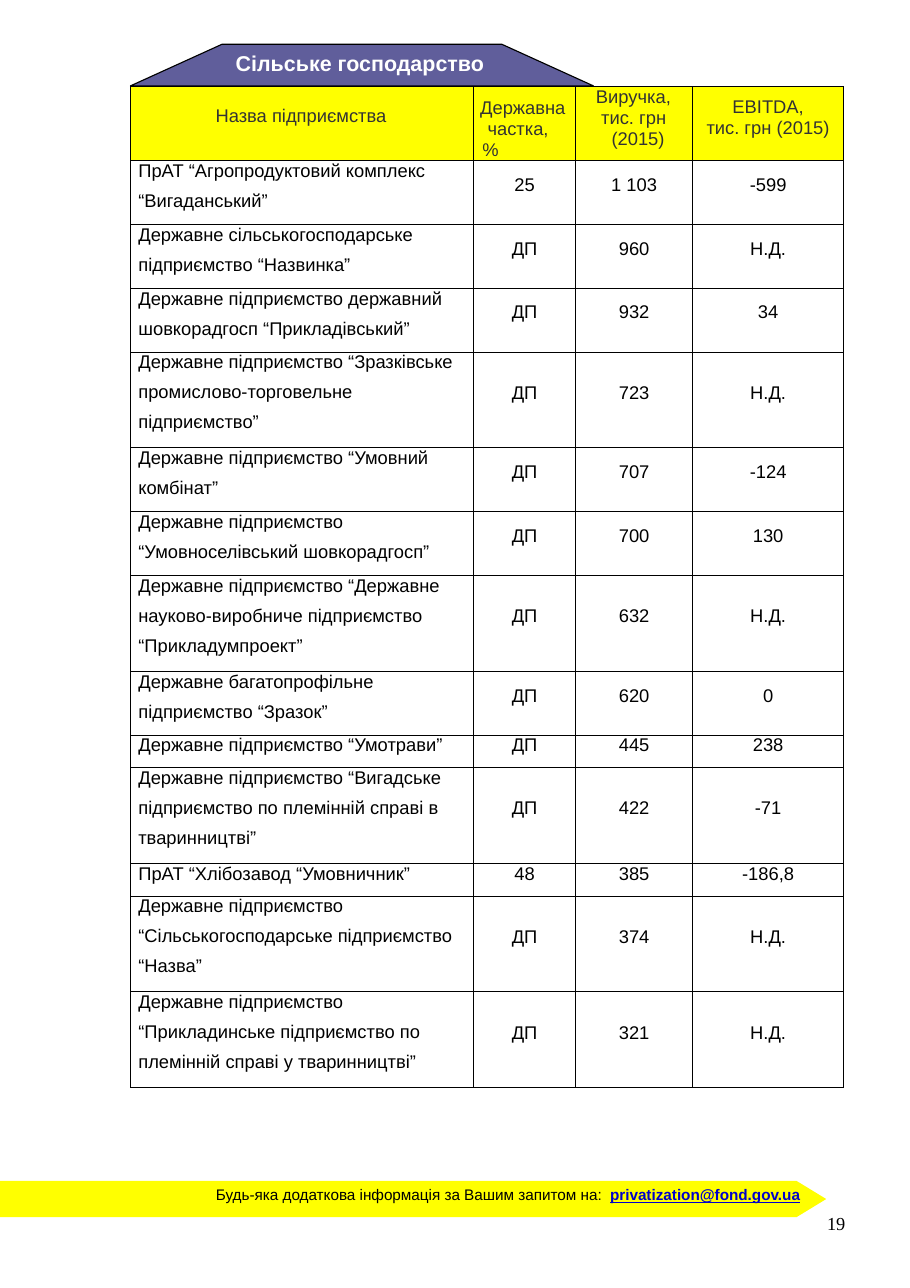
from dataclasses import dataclass

from lxml import etree
from pptx import Presentation
from pptx import util as u
from pptx.dml.color import RGBColor
from pptx.enum import shapes, text
from pptx.oxml.ns import qn

Cm, Pt = u.Cm, u.Pt

TITLE = "Сільське господарство"
CONTACT = "Будь-яка додаткова інформація за Вашим запитом на:  "
EMAIL = "privatization@fond.gov.ua"
PAGE = "19"

# Column width, top margin (cm) and lines with their indents; None means centred
HEADER = [
    (7.91, 0.44, [("Назва підприємства", 1.96)]),
    (2.35, 0.25, [("Державна", 0.15), ("частка,", 0.32), ("%", 0.2)]),
    (2.7, 0, [("Виручка,", 0.47), ("тис. грн", 0.59), ("(2015)", 0.83)]),
    (3.48, 0.23, [("EBITDA,", None), ("тис. грн (2015)", None)]),
]

# Lines of text, name paragraphs, state share, revenue, EBITDA
COMPANIES = [
    (2, ["ПрАТ “Агропродуктовий комплекс", "“Вигаданський”"], "25", "1 103", "-599"),
    (2, ["Державне сільськогосподарське", "підприємство “Назвинка”"], "ДП", "960", "Н.Д."),
    (2, ["Державне підприємство державний", "шовкорадгосп “Прикладівський”"],
     "ДП", "932", "34"),
    (3, ["Державне підприємство “Зразківське",
         "промислово-торговельне підприємство”"], "ДП", "723", "Н.Д."),
    (2, ["Державне підприємство “Умовний", "комбінат”"], "ДП", "707", "-124"),
    (2, ["Державне підприємство", "“Умовноселівський шовкорадгосп”"], "ДП", "700", "130"),
    (3, ["Державне підприємство “Державне",
         "науково-виробниче підприємство “Прикладумпроект”"], "ДП", "632", "Н.Д."),
    (2, ["Державне багатопрофільне", "підприємство “Зразок”"], "ДП", "620", "0"),
    (1, ["Державне підприємство “Умотрави”"], "ДП", "445", "238"),
    (3, ["Державне підприємство “Вигадське",
         "підприємство по племінній справі в тваринництві”"], "ДП", "422", "-71"),
    (1, ["ПрАТ “Хлібозавод “Умовничник”"], "48", "385", "-186,8"),
    (3, ["Державне підприємство",
         "“Сільськогосподарське підприємство “Назва”"], "ДП", "374", "Н.Д."),
    (3, ["Державне підприємство",
         "“Прикладинське підприємство по племінній справі у тваринництві”"],
     "ДП", "321", "Н.Д."),
]

HEADER_HEIGHT = 1.71
ROW_HEIGHT = {1: 0.75, 2: 1.47, 3: 2.21}
VALUE_TOP = {1: 0, 2: 0.32, 3: 0.7}
NAME_INDENT = 0.18


@dataclass(frozen=True)
class Theme:
    yellow = RGBColor.from_string("FFFF00")
    violet = RGBColor.from_string("605E9B")
    black = RGBColor.from_string("000000")
    white = RGBColor.from_string("FFFFFF")
    grey = RGBColor.from_string("333333")
    blue = RGBColor.from_string("0000CC")
    sans = "Arial"
    serif = "Times New Roman"
    title = 14
    body = 12
    footer = 10
    first_line = 13.6
    next_line = 19.6
    header_line = 13.8


def style(r, size, color, font=Theme.sans, bold=False):
    r.font.size, r.font.name, r.font.bold = Pt(size), font, bold
    r.font.color.rgb = color


def add_label(slide, box, words, size, color, **kw):
    tf = slide.shapes.add_textbox(*map(Cm, box)).text_frame
    tf.margin_left = tf.margin_top = tf.margin_right = tf.margin_bottom = 0
    tf.word_wrap = True
    p = tf.paragraphs[0]
    p.text = words
    style(p.runs[0], size, color, **kw)
    return p


def add_banner(slide, preset, box, adjustment, color):
    sp = slide.shapes.add_shape(preset, *map(Cm, box))
    sp.adjustments[0] = adjustment
    sp.shadow.inherit = False
    sp.fill.solid()
    sp.fill.fore_color.rgb = color
    sp.line.fill.background()
    return sp


def add_borders(cell):
    props = cell._tc.get_or_add_tcPr()
    for i, side in enumerate(("lnL", "lnR", "lnT", "lnB")):
        ln = etree.Element(qn(f"a:{side}"), w=str(Pt(0.48)))
        fill = etree.SubElement(ln, qn("a:solidFill"))
        etree.SubElement(fill, qn("a:srgbClr"), val=str(Theme.black))
        props.insert(i, ln)


def fill_cell(cell, lines, top, color, fill=None):
    """Write (words, indent, line spacing) paragraphs; no indent centres them."""
    cell.margin_left = cell.margin_right = cell.margin_bottom = 0
    cell.margin_top = Cm(top)
    if fill is None:
        cell.fill.background()
    else:
        cell.fill.solid()
        cell.fill.fore_color.rgb = fill
    add_borders(cell)
    tf = cell.text_frame
    tf.text = "\n".join(words for words, _, _ in lines)
    for p, (_, indent, spacing) in zip(tf.paragraphs, lines):
        p.line_spacing = Pt(spacing)
        if indent is None:
            p.alignment = text.PP_ALIGN.CENTER
        else:
            p._p.get_or_add_pPr().set("marL", str(Cm(indent)))
        style(p.runs[0], Theme.body, color)


def add_company_table(slide):
    heights = [HEADER_HEIGHT] + [ROW_HEIGHT[row[0]] for row in COMPANIES]
    widths = [column[0] for column in HEADER]
    table = slide.shapes.add_table(
        len(heights), len(widths), Cm(3.01), Cm(1.99),
        Cm(sum(widths)), Cm(sum(heights))).table
    table.first_row = table.horz_banding = False
    for row, height in zip(table.rows, heights):
        row.height = Cm(height)

    for c, (width, top, lines) in enumerate(HEADER):
        table.columns[c].width = Cm(width)
        spaced = [(words, indent, Theme.header_line) for words, indent in lines]
        fill_cell(table.cell(0, c), spaced, top, Theme.grey, Theme.yellow)

    for r, (count, name, *values) in enumerate(COMPANIES, 1):
        spacings = (Theme.first_line, Theme.next_line)
        lines = [(words, NAME_INDENT, gap) for words, gap in zip(name, spacings)]
        fill_cell(table.cell(r, 0), lines, 0, Theme.black)
        for c, value in enumerate(values, 1):
            fill_cell(table.cell(r, c), [(value, None, Theme.first_line)],
                      VALUE_TOP[count], Theme.black)


def main():
    prs = Presentation()
    prs.slide_width, prs.slide_height = Cm(20.98), Cm(29.69)
    slide = prs.slides.add_slide(prs.slide_layouts[6])

    add_banner(slide, shapes.MSO_SHAPE.PENTAGON, (0, 27.22, 19.05, 0.84), 0.82,
               Theme.yellow)
    add_company_table(slide)
    heading = add_banner(slide, shapes.MSO_SHAPE.TRAPEZOID,
                         (3.01, 1.02, 10.67, 0.96), 2.2, Theme.violet)
    heading.line.color.rgb = Theme.black
    heading.line.width = Pt(0.75)

    p = add_label(slide, (5.2, 1.16, 6.2, 0.62), TITLE, Theme.title, Theme.white,
                  bold=True)
    p.alignment = text.PP_ALIGN.CENTER
    p = add_label(slide, (4.98, 27.33, 13.6, 0.46), CONTACT, Theme.footer, Theme.black)
    r = p.add_run()
    r.text = EMAIL
    style(r, Theme.footer, Theme.blue, bold=True)
    r.font.underline = True
    add_label(slide, (19.07, 27.94, 0.6, 0.53), PAGE, Theme.body, Theme.black,
              font=Theme.serif)

    prs.save("out.pptx")


if __name__ == "__main__":
    main()
